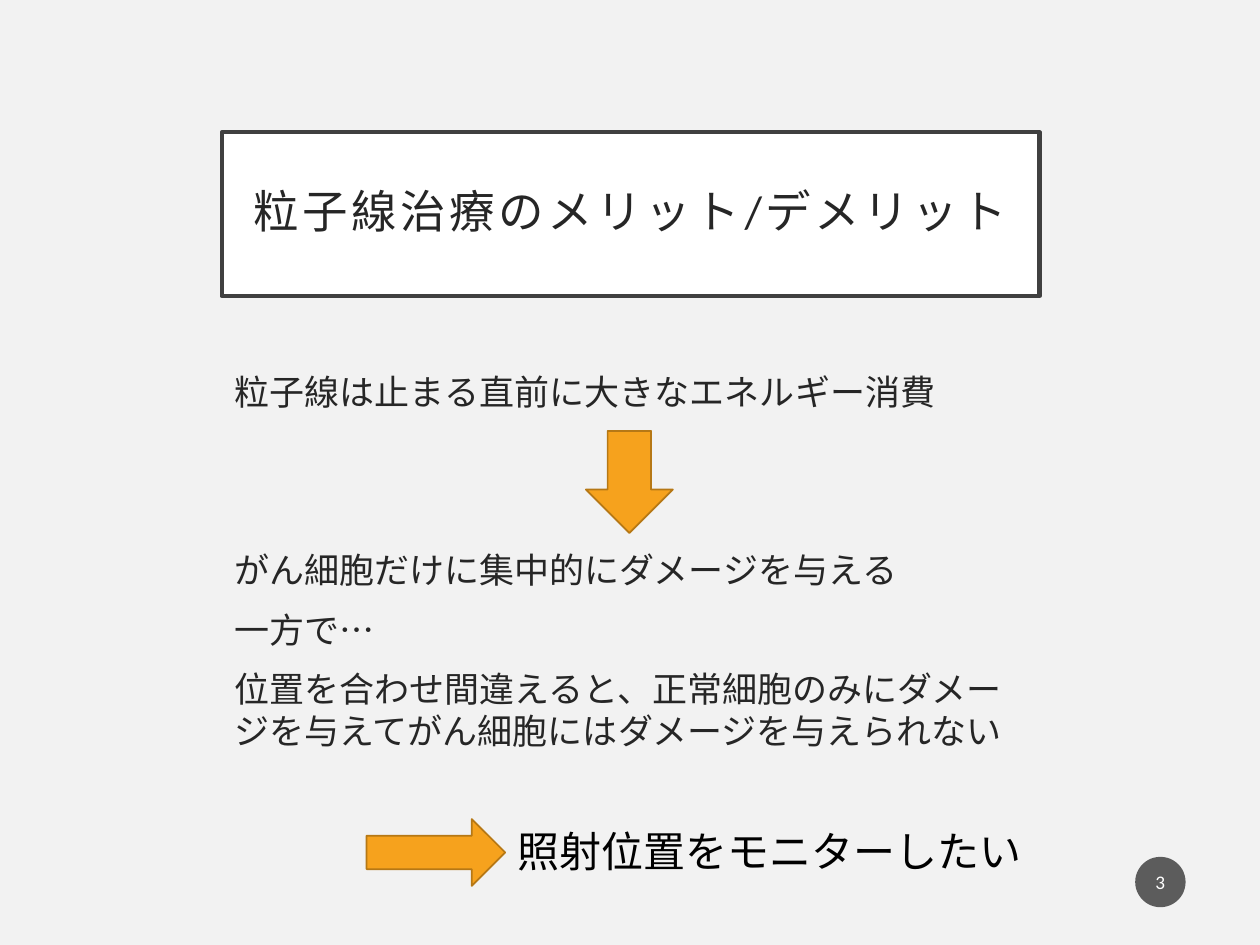
"""Build the slide on the merits and drawbacks of particle therapy."""
import pptx
import pptx.dml.color
import pptx.enum.shapes
import pptx.enum.text
import pptx.oxml
import pptx.oxml.ns
import pptx.util

Pt = pptx.util.Pt
RGB = pptx.dml.color.RGBColor.from_string
SHAPE = pptx.enum.shapes.MSO_SHAPE
ALIGN = pptx.enum.text.PP_ALIGN
ANCHOR = pptx.enum.text.MSO_ANCHOR

THEME = {
    "font": "Calibri",
    "background": "F2F2F2",
    "panel": "FFFFFF",
    "frame": "404040",
    "text": "262626",
    "conclusion": "000000",
    "arrow": "F6A21D",
    "arrow_line": "B67815",
    "badge": "1D1D1D",
    "badge_text": "FFFFFF",
    "title_size": 26,
    "body_size": 20,
    "conclusion_size": 24,
    "badge_size": 11,
}

prs = pptx.Presentation()
prs.slide_width, prs.slide_height = pptx.util.Inches(10), pptx.util.Inches(7.5)
COL, ROW = prs.slide_width / 100, prs.slide_height / 100
LEFT, WIDTH = 17.6, 64.9
ARROW_END, LAST_ROW = 40.1, 86.67


def box(x, y, w, h):
    """Turn percentages of the slide into left, top, width and height."""
    return int(x * COL), int(y * ROW), int(w * COL), int(h * ROW)


def write(p, text, role, **formats):
    """Add a run in the style of a role and format its paragraph."""
    for name, value in formats.items():
        setattr(p, name, value)
    r = p.add_run()
    r.text = text
    size_role = "body" if role == "text" else role.removesuffix("_text")
    for name, value in {"name": THEME["font"], "size": Pt(THEME[size_role + "_size"])}.items():
        setattr(r.font, name, value)
    r.font.color.rgb = RGB(THEME[role])
    return r


THEME["title"] = THEME["text"]
s = prs.slides.add_slide(prs.slide_layouts[5])
s.background.fill.solid()
s.background.fill.fore_color.rgb = RGB(THEME["background"])

title = s.shapes.title
title.left, title.top, title.width, title.height = box(LEFT, 14, WIDTH, 17.33)
title.fill.solid()
title.fill.fore_color.rgb = RGB(THEME["panel"])
title.line.color.rgb = RGB(THEME["frame"])
title.line.width = Pt(2.5)
tf = title.text_frame
inset = pptx.util.Inches(0.2)
title_format = {
    "word_wrap": True,
    "auto_size": pptx.enum.text.MSO_AUTO_SIZE.NONE,
    "vertical_anchor": ANCHOR.MIDDLE,
    "margin_left": inset,
    "margin_right": inset,
    "margin_top": inset,
    "margin_bottom": inset,
}
for name, value in title_format.items():
    setattr(tf, name, value)
r = write(tf.paragraphs[0], "粒子線治療のメリット/デメリット", "title",
          alignment=ALIGN.CENTER, line_spacing=0.9)
r.font._element.set("spc", "200")

body = [
    ("粒子線は止まる直前に大きなエネルギー消費", 10),
    ("がん細胞だけに集中的にダメージを与える", 78),
    ("一方で…", 10),
    ("位置を合わせ間違えると、正常細胞のみにダメージを与えてがん細胞にはダメージを与えられない", 10),
]
tf = s.shapes.add_textbox(*box(LEFT, 38.53, WIDTH, 45.2)).text_frame
tf.word_wrap = True
for i, (text, gap) in enumerate(body):
    p = tf.add_paragraph() if i else tf.paragraphs[0]
    write(p, text, "text", space_before=Pt(gap))

arrows = [
    (SHAPE.DOWN_ARROW, box(46.5, 45.6, 6.9, 10.8)),
    (SHAPE.RIGHT_ARROW, box(ARROW_END - 11, LAST_ROW, 11, 7.07)),
]
for kind, place in arrows:
    sp = s.shapes.add_shape(kind, *place)
    sp.shadow.inherit = False
    sp.fill.solid()
    sp.fill.fore_color.rgb = RGB(THEME["arrow"])
    sp.line.color.rgb = RGB(THEME["arrow_line"])
    sp.line.width = Pt(1)

tf = s.shapes.add_textbox(*box(ARROW_END, LAST_ROW, 42.4, 6.67)).text_frame
tf.word_wrap = True
write(tf.paragraphs[0], "照射位置をモニターしたい", "conclusion")

badge = s.shapes.add_shape(SHAPE.OVAL, *box(90.1, 90.67, 4, 5.33))
badge.shadow.inherit = False
badge.fill.solid()
badge.fill.fore_color.rgb = RGB(THEME["badge"])
color = badge.fill._xPr.find(".//" + pptx.oxml.ns.qn("a:srgbClr"))
alpha = pptx.oxml.parse_xml(f'<a:alpha {pptx.oxml.ns.nsdecls("a")} val="70000"/>')
color.append(alpha)
badge.line.fill.background()
tf = badge.text_frame
tf.margin_left = tf.margin_right = pptx.util.Inches(0.02)
tf.vertical_anchor = ANCHOR.MIDDLE
write(tf.paragraphs[0], "3", "badge_text", alignment=ALIGN.CENTER)

prs.save("out.pptx")
